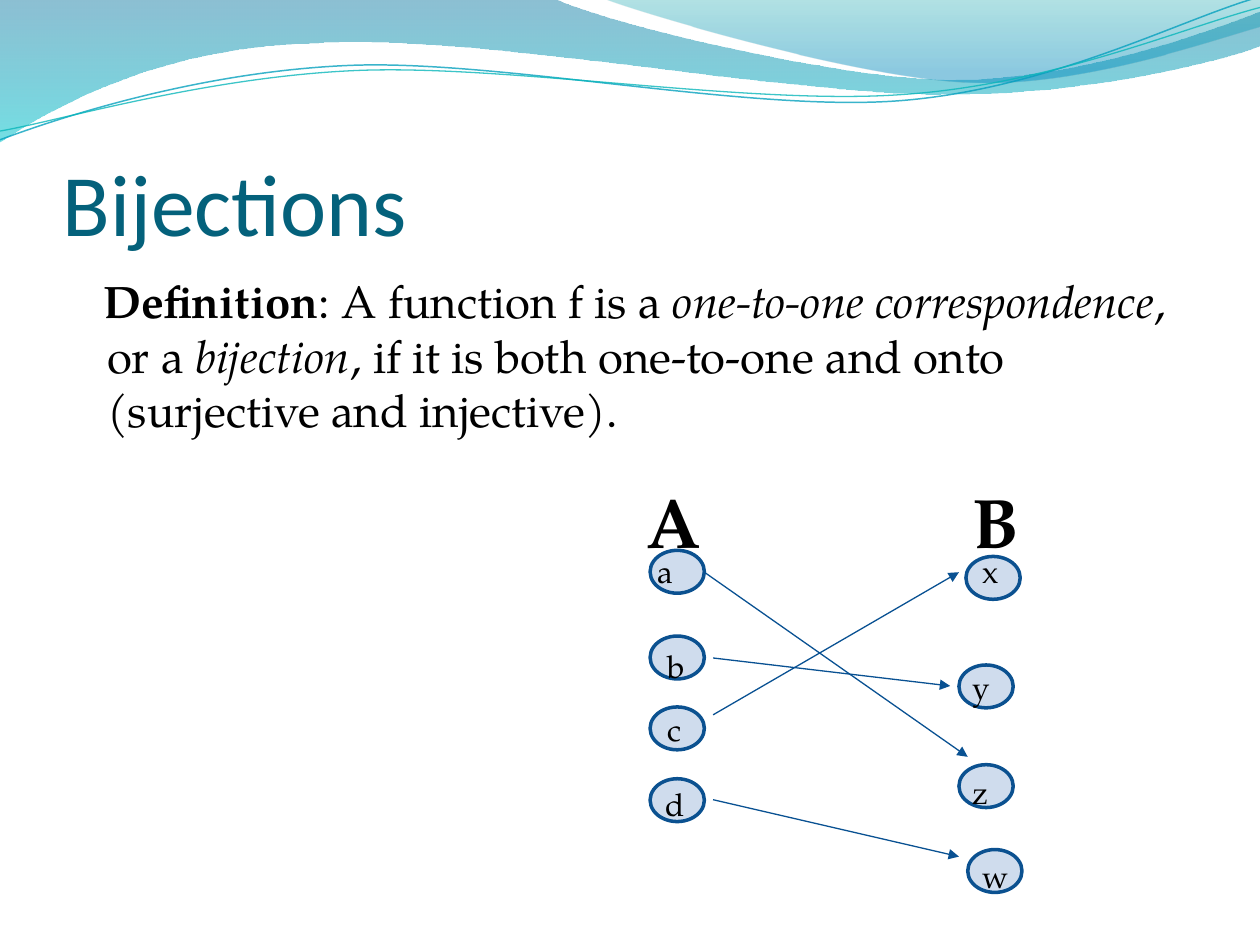
from dataclasses import dataclass
from math import cos, radians, sin

from lxml.etree import SubElement
from pptx import Presentation
from pptx.dml.color import RGBColor
from pptx.enum.shapes import MSO_CONNECTOR, MSO_SHAPE
from pptx.enum.text import MSO_ANCHOR
from pptx.oxml.ns import qn
from pptx.util import Pt


@dataclass(frozen=True)
class Theme:
    head: str = "Calibri"
    body: str = "TeX Gyre Pagella"
    title: str = "04617B"
    ink: str = "000000"
    node: str = "4F81BD"
    rim: str = "0B5190"
    arrow: str = "095192"
    title_size: int = 50
    text_size: int = 26
    set_size: int = 40
    label_size: int = 18


THEME = Theme()

# Each wave: start point, then segments of 2 numbers (line) or 6 (curve).
BANDS = [
    ((0, 0),
     [(316.8, -0.7),
      (342.7, 12.2, 478.1, 45.4, 545.8, 45.4),
      (614.2, 45.4, 689.8, 18.7, 720, 6.5),
      (720.7, 25.9),
      (707.8, 31.7, 626.4, 54.7, 537.1, 54),
      (447.8, 54, 275, 20.2, 185, 24.5),
      (92.9, 25.9, 33.1, 59.8, -0.7, 81.4),
      (0, 0)],
     [(0, "00739E", 45), (1, "00C5CE", 55)]),
    ((344.9, -0.7),
     [(366.5, 7.9, 491, 44.6, 553.7, 46.8),
      (616.3, 49.7, 691.9, 23, 720, 15.1),
      (720, 0),
      (344.9, -0.7)],
     [(0, "009FA6", 30), (0.8, "008ABE", 45)]),
]
STRANDS = [
    ((0, 79.9),
     [(34.6, 67, 113.8, 41, 199.4, 37.4),
      (284.4, 33.8, 427, 64.1, 513.4, 57.6),
      (599.8, 51.1, 675.4, 10.8, 718.6, -1.4)],
     (359.3, 40.3), "05A0BE", 0.85),
    ((0, 74.9),
     [(33.8, 69.1, 118.1, 43.9, 203.8, 40.3),
      (290.2, 36.7, 429.8, 60.5, 516.2, 54),
      (601.9, 48.2, 678, 15.1, 720, 4.3)],
     (359.6, 41.8), "08B6BA", 0.75),
]
TILT = 2.7

# Diagram parts, relative to its box: name, oval x and y, label x and y.
NODES = [
    ("a", 5.5, 44.5, 6, 42), ("b", 5.5, 93.5, 12, 96),
    ("c", 5.5, 134, 12, 132), ("d", 5.5, 175, 10.5, 175),
    ("x", 186, 48, 192, 42), ("y", 182, 110, 186, 108),
    ("z", 182, 167, 186, 168), ("w", 187, 215.5, 192, 216),
]
SETS = [("A", 0), ("B", 186)]
ARROWS = [
    (36.5, 57, 187, 162.5), (41.5, 106, 177, 122),
    (41.5, 138.5, 182, 57), (41.5, 187, 182, 219.5),
]
OVAL = (31, 24.5)


def rgb(code):
    return RGBColor.from_string(code)


def fade(shape, *levels):
    """Set the opacity, in percent, of the shape's colours in order."""
    for color, level in zip(shape._element.spPr.iter(qn("a:srgbClr")), levels):
        SubElement(color, qn("a:alpha")).set("val", str(level * 1000))


def pairs(part):
    return list(zip(part[::2], part[1::2]))


def turn(part, mid, angle):
    """Turn every point of a segment clockwise around mid."""
    c, s = cos(radians(angle)), sin(radians(angle))
    x0, y0 = mid
    return [value for x, y in pairs(part) for value in (
        x0 + (x - x0) * c - (y - y0) * s, y0 + (x - x0) * s + (y - y0) * c)]


def add_path(slide, box, start, parts, close):
    """Lay out all points as lines, then join each three into a curve."""
    left, top = box
    points = [(Pt(left + x), Pt(top + y))
              for part in [start, *parts] for x, y in pairs(part)]
    maker = slide.shapes.build_freeform(*points[0], scale=1.0)
    maker.add_line_segments(points[1:], close=close)
    shape = maker.convert_to_shape()
    shape.shadow.inherit = False
    lines = iter(list(shape._element.spPr.iter(qn("a:lnTo"))))
    for part in parts:
        line = next(lines)
        if len(part) == 6:
            line.tag = qn("a:cubicBezTo")
            for _ in range(2):
                extra = next(lines)
                line.append(extra[0])
                extra.getparent().remove(extra)
    return shape


def add_waves(slide, box):
    for start, parts, stops in BANDS:
        band = add_path(slide, box, start, parts, True)
        band.line.fill.background()
        band.fill.gradient()
        band.fill.gradient_angle = 270
        for stop, (place, code, _) in zip(band.fill.gradient_stops, stops):
            stop.position = place
            stop.color.rgb = rgb(code)
        fade(band, *(level for _, _, level in stops))
    for start, parts, mid, code, width in STRANDS:
        flat = [turn(part, mid, TILT) for part in [start, *parts]]
        strand = add_path(slide, box, flat[0], flat[1:], False)
        strand.rotation = 360 - TILT
        strand.fill.background()
        strand.line.color.rgb = rgb(code)
        strand.line.width = Pt(width)
        fade(strand, 78)


def style(run, size, face=THEME.body, code=THEME.ink, bold=False, italic=False):
    font = run.font
    font.size, font.name, font.bold, font.italic = Pt(size), face, bold, italic
    font.color.rgb = rgb(code)


def add_box(slide, box, inset=3.6):
    frame = slide.shapes.add_textbox(*map(Pt, box)).text_frame
    frame.word_wrap = True
    frame.margin_left = frame.margin_right = Pt(inset)
    frame.margin_top = frame.margin_bottom = Pt(inset)
    return frame


def add_label(slide, box, text, size, **looks):
    frame = add_box(slide, box)
    frame.text = text
    style(frame.paragraphs[0].runs[0], size, **looks)


def add_title(slide, box, text):
    frame = add_box(slide, box, 0)
    frame.vertical_anchor = MSO_ANCHOR.BOTTOM
    frame.text = text
    style(frame.paragraphs[0].runs[0], THEME.title_size, THEME.head, THEME.title)


def add_body(slide, box, parts):
    para = add_box(slide, box).paragraphs[0]
    props = para._p.get_or_add_pPr()
    props.set("marL", str(Pt(21.6)))
    props.set("indent", str(Pt(-2)))
    for text, looks in parts:
        run = para.add_run()
        run.text = text
        style(run, THEME.text_size, **looks)


def add_arrow(slide, x1, y1, x2, y2):
    arrow = slide.shapes.add_connector(
        MSO_CONNECTOR.STRAIGHT, Pt(x1), Pt(y1), Pt(x2), Pt(y2))
    arrow.line.color.rgb = rgb(THEME.arrow)
    arrow.line.width = Pt(0.75)
    SubElement(arrow.line._get_or_add_ln(), qn("a:tailEnd")).set("type", "triangle")
    SubElement(arrow._element.spPr, qn("a:effectLst"))


def add_map(slide, box):
    """Draw the sets A and B with the arrows between their members."""
    left, top = box
    for name, x in SETS:
        add_label(slide, (left + x, top, 47, 60), name, THEME.set_size, bold=True)
    for name, x, y, text_x, text_y in NODES:
        oval = slide.shapes.add_shape(
            MSO_SHAPE.OVAL, *map(Pt, (left + x, top + y, *OVAL)))
        oval.shadow.inherit = False
        oval.fill.solid()
        oval.fill.fore_color.rgb = rgb(THEME.node)
        oval.line.color.rgb = rgb(THEME.rim)
        oval.line.width = Pt(2)
        fade(oval, 27)
        add_label(slide, (left + text_x, top + text_y, 21, 31), name,
                  THEME.label_size)
    for x1, y1, x2, y2 in ARROWS:
        add_arrow(slide, left + x1, top + y1, left + x2, top + y2)


def main():
    deck = Presentation()
    deck.slide_width, deck.slide_height = Pt(720), Pt(540)
    slide = deck.slides.add_slide(deck.slide_layouts[6])
    add_waves(slide, (0, 0))
    add_title(slide, (36, 55, 648, 90), "Bijections")
    add_body(slide, (36, 152.5, 648, 345.5), [
        ("Definition", {"bold": True}),
        (": A function f is a ", {}),
        ("one-to-one correspondence", {"italic": True}),
        (", or a ", {}),
        ("bijection", {"italic": True}),
        (", if it is both one-to-one and onto (surjective and injective).", {}),
    ])
    add_map(slide, (366, 270))
    deck.save("out.pptx")


if __name__ == "__main__":
    main()
